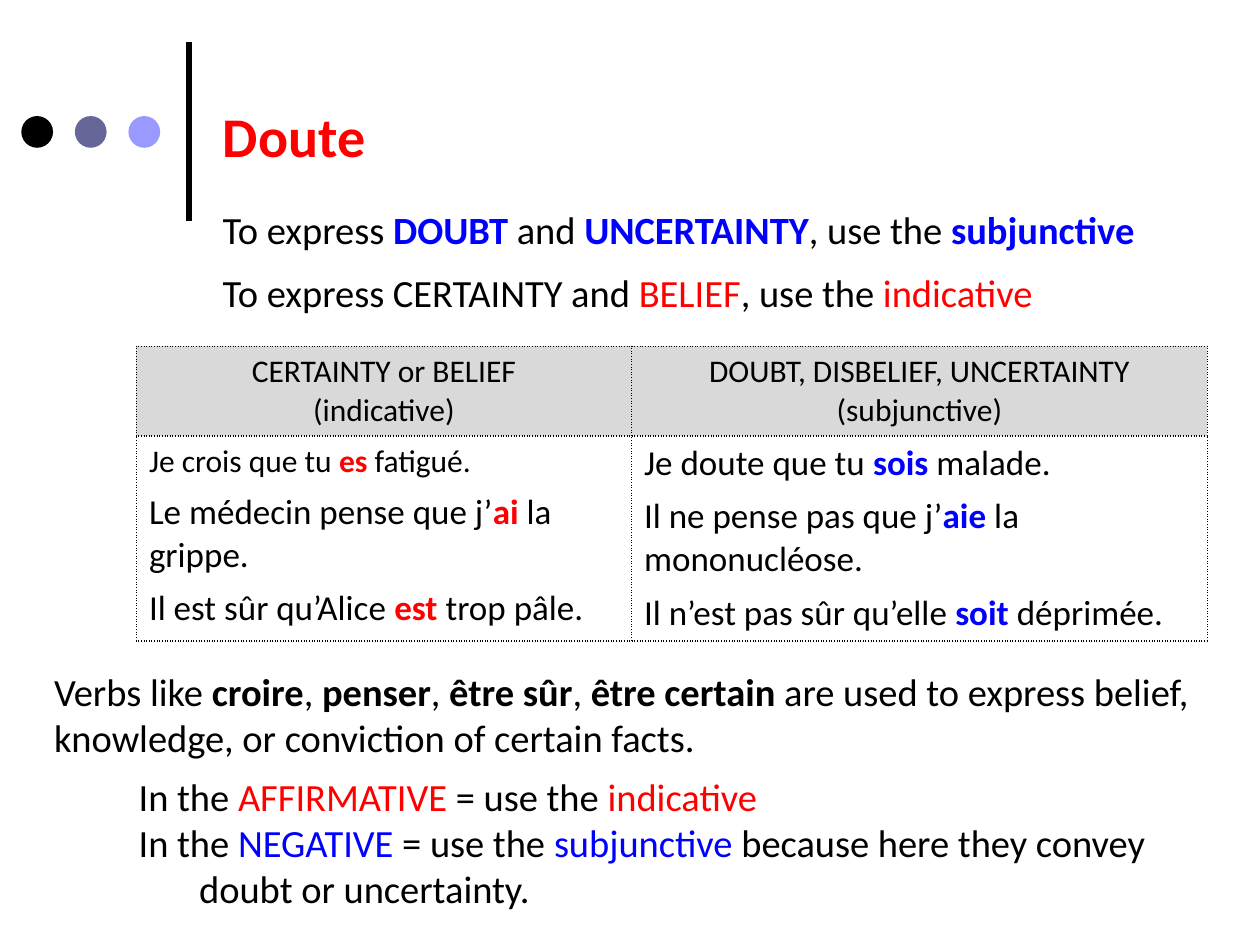
from lxml.etree import SubElement
from pptx import Presentation
from pptx.dml.color import RGBColor
from pptx.enum.shapes import MSO_CONNECTOR, MSO_SHAPE
from pptx.enum.text import MSO_ANCHOR, MSO_AUTO_SIZE, PP_ALIGN
from pptx.oxml import parse_xml
from pptx.oxml.ns import nsdecls, qn
from pptx.util import Cm, Pt

BLACK = RGBColor(0x00, 0x00, 0x00)
SLATE = RGBColor(0x66, 0x66, 0x99)
LILAC = RGBColor(0x99, 0x99, 0xFF)
RED = RGBColor(0xFF, 0x00, 0x00)
BLUE = RGBColor(0x00, 0x00, 0xFF)
GREY = RGBColor(0xD9, 0xD9, 0xD9)


def red(text, bold=False):
    return text, RED, bold


def blue(text, bold=False):
    return text, BLUE, bold


def strong(text):
    return text, BLACK, True


class Page:
    font = "Calibri"
    size = 22

    def __init__(self, slide):
        self.s = slide

    def add_runs(self, p, parts, size=size, align=PP_ALIGN.LEFT, before=0):
        """Fill a paragraph from plain strings and (text, colour, bold) parts."""
        p.alignment = align
        p.space_before = Pt(before)
        for part in parts:
            text, color, bold = (part, BLACK, False) if isinstance(part, str) else part
            r = p.add_run()
            r.text = text
            r.font.name, r.font.size = self.font, Pt(size)
            r.font.bold, r.font.color.rgb = bold, color

    def fill(self, tf, lines, **style):
        for i, parts in enumerate(lines):
            p = tf.paragraphs[0] if i == 0 else tf.add_paragraph()
            self.add_runs(p, parts, **style)

    def frame(self, sp, box, anchor=MSO_ANCHOR.TOP):
        sp.left, sp.top, sp.width, sp.height = (Cm(v) for v in box)
        tf = sp.text_frame
        tf.word_wrap, tf.auto_size = True, MSO_AUTO_SIZE.NONE
        tf.vertical_anchor = anchor
        return tf

    def title(self, text, box):
        tf = self.frame(self.s.shapes.title, box, MSO_ANCHOR.MIDDLE)
        self.fill(tf, [[red(text, True)]], size=32)

    def body(self, lines, box, indents):
        tf = self.frame(self.s.placeholders[1], box)
        self.fill(tf, lines)
        for p, indent in zip(tf.paragraphs, indents):
            pPr = p._p.get_or_add_pPr()
            pPr.set("marL", str(Cm(indent)))
            pPr.set("indent", "0")
            SubElement(pPr, qn("a:buNone"))

    def text(self, parts, box):
        sp = self.s.shapes.add_textbox(*(Cm(v) for v in box))
        self.fill(self.frame(sp, box), [parts])

    def dot(self, x, y, d, color):
        sp = self.s.shapes.add_shape(MSO_SHAPE.OVAL, Cm(x), Cm(y), Cm(d), Cm(d))
        sp.shadow.inherit = False
        sp.fill.solid()
        sp.fill.fore_color.rgb = color
        sp.line.fill.background()

    def line(self, x1, y1, x2, y2):
        c = self.s.shapes.add_connector(
            MSO_CONNECTOR.STRAIGHT, Cm(x1), Cm(y1), Cm(x2), Cm(y2))
        c.line.color.rgb, c.line.width = BLACK, Pt(3)
        SubElement(c._element.spPr, qn("a:effectLst"))

    def border(self, cell):
        tcPr = cell._tc.get_or_add_tcPr()
        for i, side in enumerate("LRTB"):
            tcPr.insert(i, parse_xml(
                f'<a:ln{side} {nsdecls("a")} w="{Pt(1)}"><a:solidFill>'
                f'<a:srgbClr val="{BLACK}"/></a:solidFill>'
                f'<a:prstDash val="sysDot"/></a:ln{side}>'))

    def table(self, heads, examples, x, y, widths, heights):
        tbl = self.s.shapes.add_table(
            2, len(widths), Cm(x), Cm(y), Cm(sum(widths)), Cm(sum(heights))).table
        tbl.first_row = tbl.horz_banding = False
        for row, h in zip(tbl.rows, heights):
            row.height = Cm(h)
        for c, w in enumerate(widths):
            tbl.columns[c].width = Cm(w)
            head, cell = tbl.cell(0, c), tbl.cell(1, c)
            head.fill.solid()
            head.fill.fore_color.rgb = GREY
            cell.fill.background()
            self.fill(head.text_frame, heads[c], size=18, align=PP_ALIGN.CENTER)
            self.fill(cell.text_frame, examples[c], size=20, before=6)
            self.border(head)
            self.border(cell)
        return tbl


def main():
    prs = Presentation()
    prs.slide_width, prs.slide_height = Cm(25.4), Cm(19.05)
    page = Page(prs.slides.add_slide(prs.slide_layouts[1]))

    # Decoration beside the title
    page.line(3.81, 4.45, 3.81, 0.84)
    for i, color in enumerate((BLACK, SLATE, LILAC)):
        page.dot(0.43 + 1.08 * i, 2.34, 0.64, color)

    # Title and the two rules
    page.title("Doute", (4.24, 1.9, 18.62, 1.63))
    rules = [
        ["To express ", blue("DOUBT", True), " and ", blue("UNCERTAINTY", True),
         ", use the ", blue("subjunctive", True)],
        ["To express CERTAINTY and ", red("BELIEF"), ", use the ", red("indicative")],
    ]
    for i, rule in enumerate(rules):
        page.text(rule, (4.24, 4.02 + 1.27 * i, 20.12, 1.19))

    # Examples
    heads = [
        [["CERTAINTY or BELIEF"], ["(indicative)"]],
        [["DOUBT, DISBELIEF, UNCERTAINTY"], ["(subjunctive)"]],
    ]
    examples = [
        [["Je crois que tu ", red("es ", True), "fatigué."],
         ["Le médecin pense que j’", red("ai ", True), "la grippe."],
         ["Il est sûr qu’Alice ", red("est ", True), "trop pâle."]],
        [["Je doute que tu ", blue("sois ", True), "malade."],
         ["Il ne pense pas que j’", blue("aie", True), " la mononucléose."],
         ["Il n’est pas sûr qu’elle ", blue("soit ", True), "déprimée."]],
    ]
    tbl = page.table(heads, examples, 2.75, 6.98, (9.98, 11.61), (1.78, 4.06))
    for r in tbl.cell(1, 0).text_frame.paragraphs[0].runs:
        r.font.size = Pt(18)

    # Usage notes
    page.text(["Verbs like ", strong("croire"), ", ", strong("penser"), ", ",
               strong("être sûr"), ", ", strong("être certain "),
               "are used to express belief, knowledge, or conviction of certain facts."],
              (0.84, 13.34, 23.5, 2.13))
    page.body([
        ["In the ", red("AFFIRMATIVE"), " = use the ", red("indicative")],
        ["In the ", blue("NEGATIVE"), " = use the ", blue("subjunctive"),
         " because here they convey"],
        ["doubt or uncertainty."],
    ], (2.54, 15.45, 22.6, 3.07), indents=(0, 0, 1.22))

    prs.save("out.pptx")


if __name__ == "__main__":
    main()
